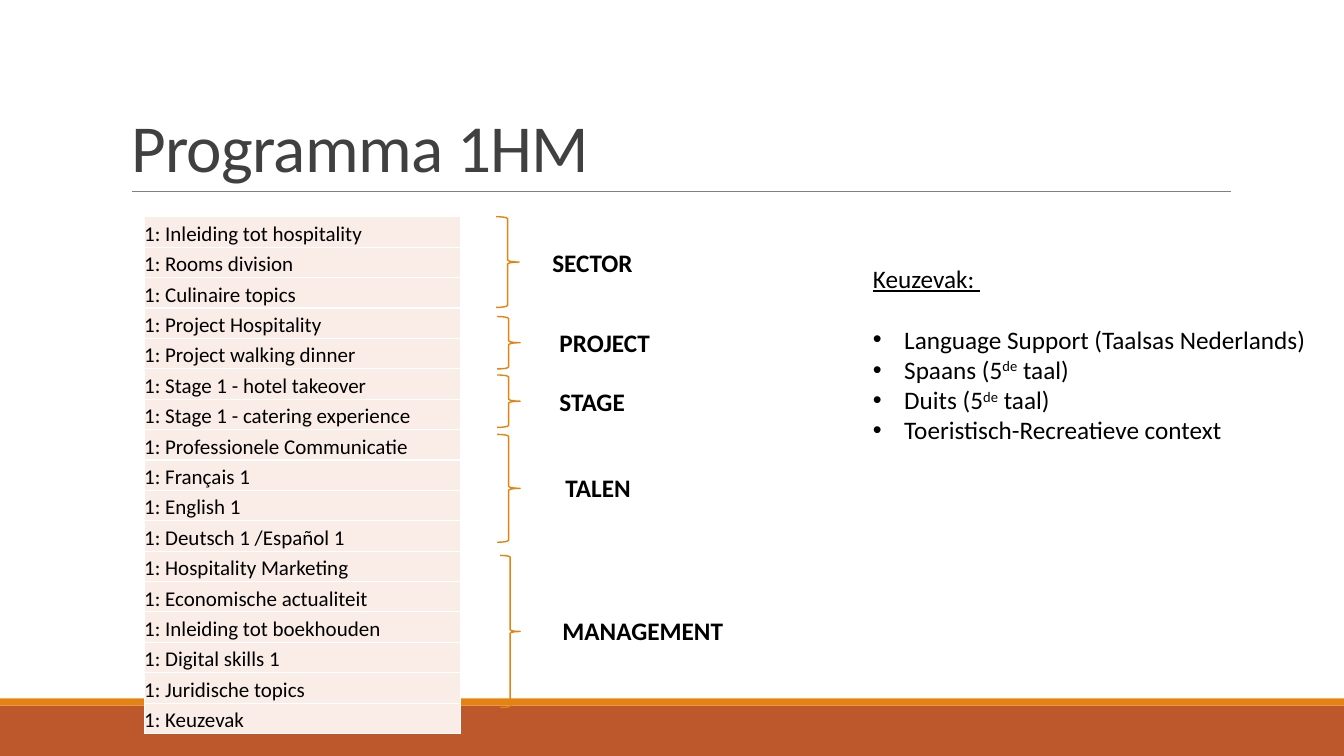
from lxml.etree import SubElement
from pptx import Presentation
from pptx.dml.color import RGBColor
from pptx.enum.shapes import MSO_CONNECTOR as CONN, MSO_SHAPE as SHAPE
from pptx.enum.text import MSO_ANCHOR as ANCHOR, MSO_AUTO_SIZE as AUTO, PP_ALIGN as ALIGN
from pptx.oxml import parse_xml
from pptx.oxml.ns import nsdecls, qn
from pptx.util import Inches, Pt

TITLE = "Programma 1HM"
COURSES = [
    "Inleiding tot hospitality", "Rooms division", "Culinaire topics",
    "Project Hospitality", "Project walking dinner",
    "Stage 1 - hotel takeover", "Stage 1 - catering experience",
    "Professionele Communicatie", "Français 1", "English 1", "Deutsch 1 /Español 1",
    "Hospitality Marketing", "Economische actualiteit", "Inleiding tot boekhouden",
    "Digital skills 1", "Juridische topics", "Keuzevak",
]
GROUPS = [
    ("SECTOR", (5.38, 2.4, 1, 0.4), (4.92, 2.15, 0.23, 0.9)),
    ("PROJECT", (5.45, 3.2, 1.11, 0.4), (4.93, 3.14, 0.23, 0.52)),
    ("STAGE", (5.45, 3.78, 0.86, 0.4), (4.93, 3.72, 0.23, 0.52)),
    ("TALEN", (5.51, 4.64, 0.87, 0.4), (4.93, 4.31, 0.23, 1.07)),
    ("MANAGEMENT", (5.48, 6.06, 1.81, 0.4), (4.96, 5.51, 0.2, 1.51)),
]
ELECTIVE_HEAD = "Keuzevak: "
ELECTIVES = [
    ["Language Support (Taalsas Nederlands)"],
    ["Spaans (5", "de", " taal)"],
    ["Duits (5", "de", " taal)"],
    ["Toeristisch-Recreatieve context"],
]
BANDS = [((0, 7, 13.33, 0.5), "BD582C"), ((0, 6.93, 13.33, 0.07), "E48312")]
TABLE_BOX = (1.43, 2.15, 3.14, 5.13)
ACCENT, BLACK = "E48312", "000000"


def rgb(code):
    return RGBColor.from_string(code)


def box(lengths):
    return [Inches(v) for v in lengths]


def set_all(obj, **values):
    for name, value in values.items():
        setattr(obj, name, value)


def add_run(p, text, size=18, color=BLACK, **values):
    r = p.add_run()
    r.text = text
    set_all(r.font, name="Calibri", size=Pt(size), **values)
    r.font.color.rgb = rgb(color)
    return r


def add_text(s, lengths, wrap):
    tf = s.shapes.add_textbox(*box(lengths)).text_frame
    set_all(tf, word_wrap=wrap, auto_size=AUTO.SHAPE_TO_FIT_TEXT)
    return tf


def add_bullet(p):
    pPr = p._p.get_or_add_pPr()
    pPr.set("marL", str(Inches(0.31)))
    pPr.set("indent", str(-Inches(0.31)))
    SubElement(pPr, qn("a:buFont")).set("typeface", "Arial")
    SubElement(pPr, qn("a:buChar")).set("char", "•")


def add_borders(cell):
    tcPr = cell._tc.get_or_add_tcPr()
    for i, side in enumerate(("lnL", "lnR", "lnT", "lnB")):
        tcPr.insert(i, parse_xml(
            f'<a:{side} {nsdecls("a")} w="{Pt(1)}"><a:solidFill>'
            f'<a:srgbClr val="FFFFFF"/></a:solidFill></a:{side}>'))


def add_frame(s):
    for lengths, color in BANDS:
        band = s.shapes.add_shape(SHAPE.RECTANGLE, *box(lengths))
        band.shadow.inherit = False
        band.fill.solid()
        band.fill.fore_color.rgb = rgb(color)
        band.line.fill.background()
    rule = s.shapes.add_connector(CONN.STRAIGHT, *box((1.31, 1.9, 12.21, 1.9)))
    rule.line.color.rgb = rgb("808080")
    rule.line.width = Pt(0.5)
    SubElement(rule._element.spPr, qn("a:effectLst"))


def add_title(s):
    title = s.shapes.title
    set_all(title, **dict(zip(("left", "top", "width", "height"), box((1.2, 0.31, 11, 1.59)))))
    tf = title.text_frame
    set_all(tf, vertical_anchor=ANCHOR.BOTTOM, auto_size=AUTO.NONE, word_wrap=True)
    p = tf.paragraphs[0]
    set_all(p, alignment=ALIGN.LEFT, line_spacing=0.85)
    r = add_run(p, TITLE, 48, "404040")
    r._r.get_or_add_rPr().set("spc", "-50")


def add_groups(s):
    for label, label_box, brace_box in GROUPS:
        tf = add_text(s, label_box, False)
        add_run(tf.paragraphs[0], label, bold=True)
        brace = s.shapes.add_shape(SHAPE.RIGHT_BRACE, *box(brace_box))
        brace.shadow.inherit = False
        brace.fill.background()
        brace.line.color.rgb = rgb(ACCENT)
        brace.line.width = Pt(1)


def add_electives(s):
    tf = add_text(s, (8.56, 2.56, 4.52, 2.22), True)
    p = tf.paragraphs[0]
    p.space_after = Pt(22)
    add_run(p, ELECTIVE_HEAD, underline=True)
    for parts in ELECTIVES:
        p = tf.add_paragraph()
        add_bullet(p)
        for text in parts:
            r = add_run(p, text)
            if text == "de":
                r._r.get_or_add_rPr().set("baseline", "30000")


def add_courses(s):
    table = s.shapes.add_table(len(COURSES), 1, *box(TABLE_BOX)).table
    set_all(table, first_row=False, horz_banding=False)
    for row, course in zip(table.rows, COURSES):
        row.height = Inches(TABLE_BOX[3] / len(COURSES))
        cell = row.cells[0]
        set_all(cell, margin_left=0, margin_right=0, margin_top=0, margin_bottom=0,
                vertical_anchor=ANCHOR.BOTTOM)
        cell.fill.solid()
        cell.fill.fore_color.rgb = rgb("FAEDE7")
        add_borders(cell)
        add_run(cell.text_frame.paragraphs[0], f"1: {course}", 15)


def main():
    prs = Presentation()
    set_all(prs, slide_width=Inches(13.33), slide_height=Inches(7.5))
    s = prs.slides.add_slide(prs.slide_layouts[5])
    for add_part in (add_frame, add_title, add_groups, add_electives, add_courses):
        add_part(s)
    prs.save("out.pptx")


if __name__ == "__main__":
    main()
